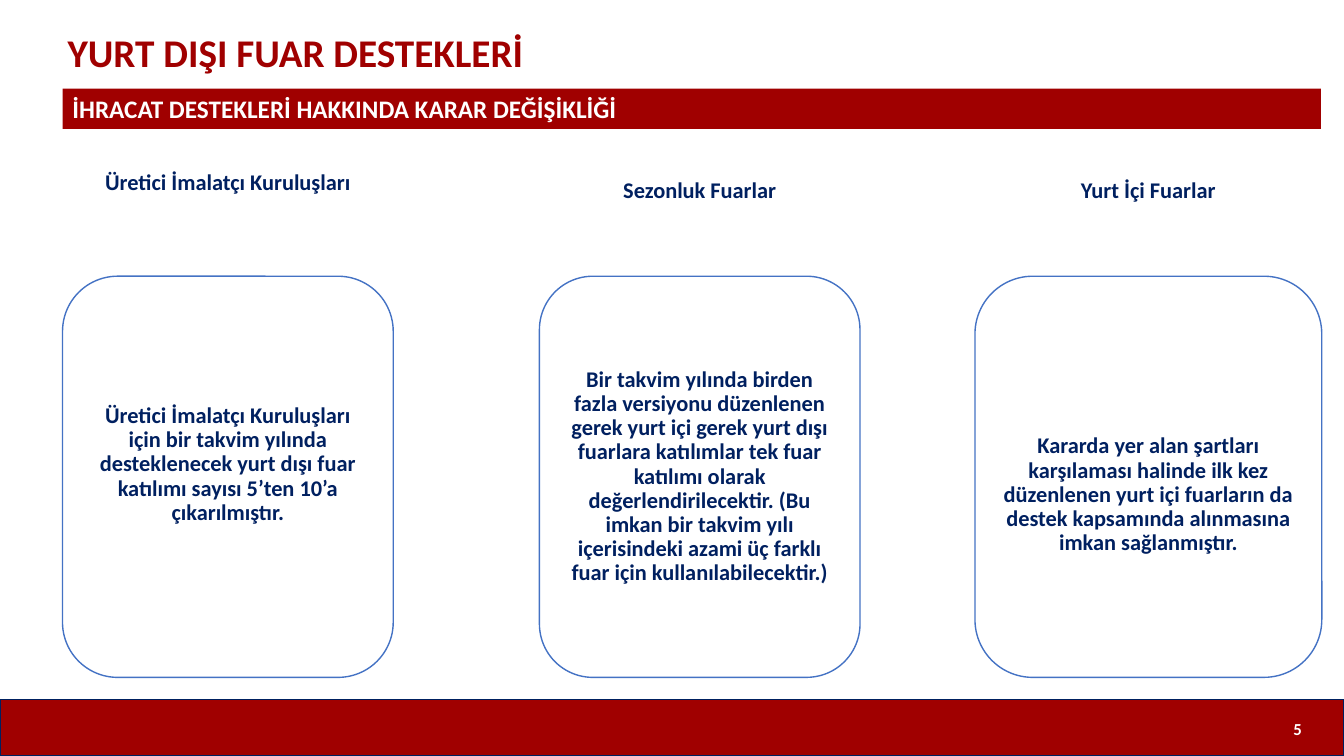
import dataclasses

import pptx
import pptx.dml.color
import pptx.enum.shapes
import pptx.enum.text
import pptx.util

Inches = pptx.util.Inches
Shapes = pptx.enum.shapes.MSO_SHAPE
Align = pptx.enum.text.PP_ALIGN
Anchor = pptx.enum.text.MSO_ANCHOR

RED, NAVY, BLUE, WHITE = "A00000", "002060", "4472C4", "FFFFFF"
LEFT, WIDTH = 0.62, 12.48
CARD_TOP, CARD_HEIGHT = 2.74, 3.98
CARD_INSET = 0.08


@dataclasses.dataclass
class Topic:
    left: float
    width: float
    heading_top: float
    heading: str
    detail: str
    extra_top: float = 0
    extra_bottom: float = 0


TOPICS = [
    Topic(LEFT, 3.28, 1.62, "Üretici İmalatçı Kuruluşları",
          "Üretici İmalatçı Kuruluşları için bir takvim yılında desteklenecek "
          "yurt dışı fuar katılımı sayısı 5’ten 10’a çıkarılmıştır.",
          extra_bottom=0.24),
    Topic(5.35, 3.18, 1.7, "Sezonluk Fuarlar",
          "Bir takvim yılında birden fazla versiyonu düzenlenen gerek yurt içi "
          "gerek yurt dışı fuarlara katılımlar tek fuar katılımı olarak "
          "değerlendirilecektir. (Bu imkan bir takvim yılı içerisindeki azami "
          "üç farklı fuar için kullanılabilecektir.)"),
    Topic(9.67, 3.44, 1.7, "Yurt İçi Fuarlar",
          "Kararda yer alan şartları karşılaması halinde ilk kez düzenlenen "
          "yurt içi fuarların da destek kapsamında alınmasına imkan "
          "sağlanmıştır.", extra_top=0.36),
]


def color(value: str) -> pptx.dml.color.RGBColor:
    return pptx.dml.color.RGBColor.from_string(value)


def apply(target, formats: dict) -> None:
    for name, value in formats.items():
        setattr(target, name, value)


def write(shape, text: str, size: float, ink: str, align=Align.CENTER,
          anchor=Anchor.MIDDLE, spacing: float = 1.0,
          insets: tuple = (0.1, 0.05, 0.1, 0.05)) -> None:
    """Fill a shape with one bold paragraph; insets run left, top, right, bottom."""
    frame = shape.text_frame
    sides = ("margin_left", "margin_top", "margin_right", "margin_bottom")
    apply(frame, {"word_wrap": True, "vertical_anchor": anchor,
                  "auto_size": pptx.enum.text.MSO_AUTO_SIZE.NONE})
    apply(frame, dict(zip(sides, map(Inches, insets))))
    para = frame.paragraphs[0]
    apply(para, {"alignment": align, "line_spacing": spacing})
    span = para.add_run()
    span.text = text
    apply(span.font, {"name": "Calibri", "size": pptx.util.Pt(size), "bold": True})
    span.font.color.rgb = color(ink)


def add_box(page, kind, place: tuple, fill: str | None = None,
            outline: str | None = None):
    box = page.shapes.add_shape(kind, *map(Inches, place))
    box.shadow.inherit = False
    if fill:
        box.fill.solid()
        box.fill.fore_color.rgb = color(fill)
    else:
        box.fill.background()
    if outline:
        box.line.color.rgb = color(outline)
        box.line.width = pptx.util.Pt(1)
    else:
        box.line.fill.background()
    return box


def add_topic(page, topic: Topic) -> None:
    card = add_box(page, Shapes.ROUNDED_RECTANGLE,
                   (topic.left, CARD_TOP, topic.width, CARD_HEIGHT), WHITE, BLUE)
    write(card, topic.detail, 16, NAVY, spacing=0.9,
          insets=(CARD_INSET, CARD_INSET + topic.extra_top,
                  CARD_INSET, CARD_INSET + topic.extra_bottom))
    heading = page.shapes.add_textbox(
        *map(Inches, (topic.left, topic.heading_top, topic.width, 0.37)))
    write(heading, topic.heading, 16, NAVY, anchor=Anchor.TOP)


def main() -> None:
    deck = pptx.Presentation()
    apply(deck, {"slide_width": Inches(13.33), "slide_height": Inches(7.5)})
    page = deck.slides.add_slide(deck.slide_layouts[5])

    # Footer band and page number
    add_box(page, Shapes.RECTANGLE, (0, 6.94, 13.33, 0.56), RED, NAVY)
    number = add_box(page, Shapes.ROUND_2_SAME_RECTANGLE, (12.63, 6.94, 0.48, 0.56))
    write(number, "5", 12, WHITE)

    # Title and subtitle bar
    title = page.shapes.title
    apply(title, {"left": Inches(LEFT), "top": Inches(0),
                  "width": Inches(7.79), "height": Inches(1.08)})
    write(title, "YURT DIŞI FUAR DESTEKLERİ", 28, RED, Align.LEFT, spacing=0.9,
          insets=(0.05,) * 4)
    subtitle = add_box(page, Shapes.RECTANGLE, (LEFT, 0.88, WIDTH, 0.4), RED)
    write(subtitle, "İHRACAT DESTEKLERİ HAKKINDA KARAR DEĞİŞİKLİĞİ", 18, WHITE,
          Align.LEFT, Anchor.TOP)

    # Topic headings and cards
    for topic in TOPICS:
        add_topic(page, topic)

    deck.save("out.pptx")


if __name__ == "__main__":
    main()
